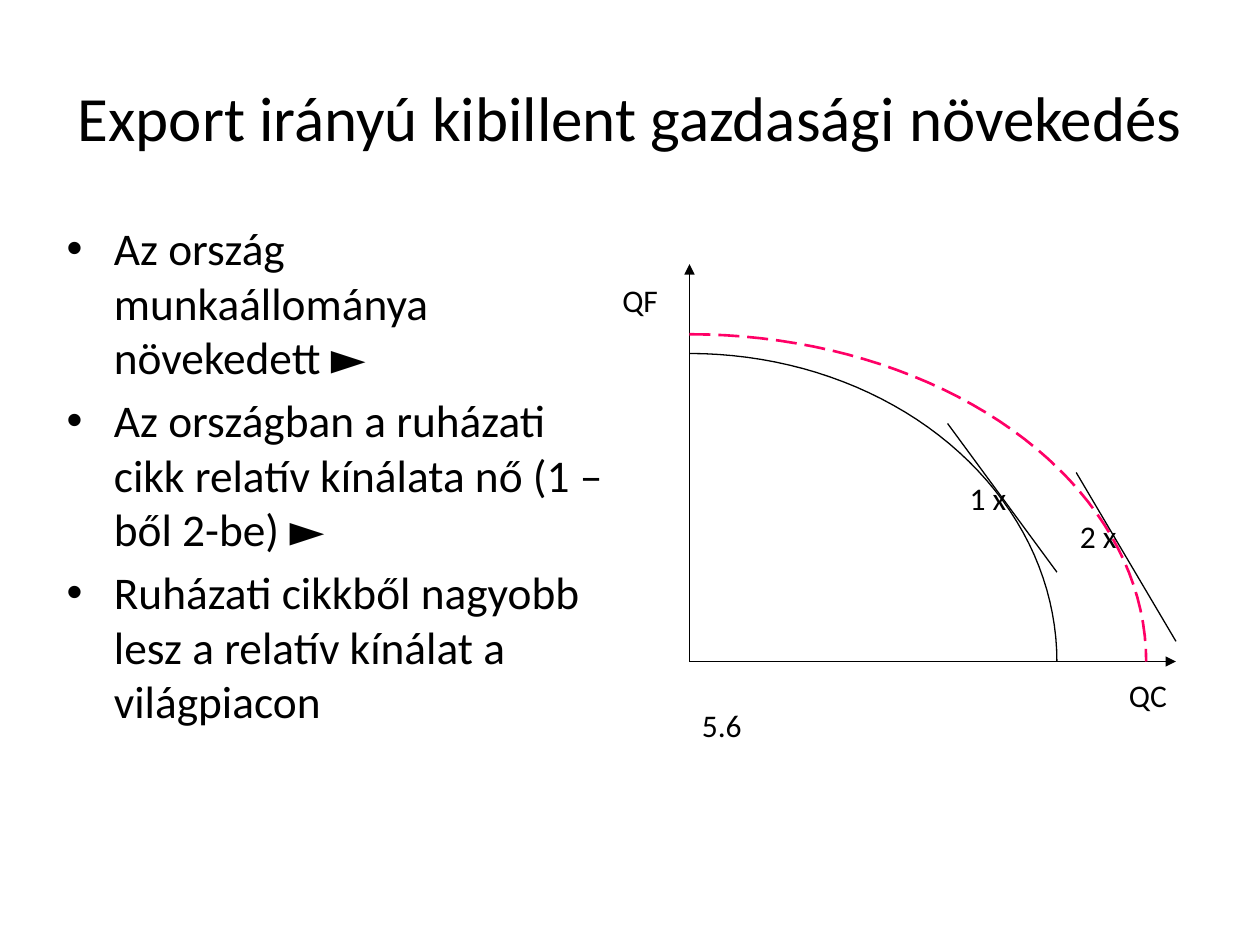
import math
from typing import NamedTuple, Optional

import pptx
import pptx.dml.color
import pptx.enum.dml
import pptx.enum.shapes
import pptx.enum.text
import pptx.oxml.ns
import pptx.util
from lxml import etree

Pt = pptx.util.Pt
RGBColor = pptx.dml.color.RGBColor
Dash = pptx.enum.dml.MSO_LINE
BLACK = RGBColor(0x00, 0x00, 0x00)
PINK = RGBColor(0xFF, 0x00, 0x66)
FONT = "Calibri"
ZERO_X, ZERO_Y = 394, 378  # origin of the graph
STEPS = 40


class Line(NamedTuple):
    x1: float
    y1: float
    x2: float
    y2: float
    arrow: bool = False


class Curve(NamedTuple):
    width: float
    height: float
    color: RGBColor
    weight: float
    dash: Optional[int] = None


class Label(NamedTuple):
    text: str
    x: float
    y: float
    width: float


TITLE = "Export irányú kibillent gazdasági növekedés"
POINTS = [
    "Az ország munkaállománya növekedett ►",
    "Az országban a ruházati cikk relatív kínálata nő (1 –ből 2-be) ►",
    "Ruházati cikkből nagyobb lesz a relatív kínálat a világpiacon",
]
AXES = [
    Line(ZERO_X, ZERO_Y, ZERO_X, 151, True),
    Line(ZERO_X, ZERO_Y, 672, ZERO_Y, True),
]
TANGENTS = [Line(541.5, 242, 604, 327), Line(615, 270, 672, 366.5)]
CURVES = [
    Curve(210, 176, BLACK, 0.75),
    Curve(261, 187, PINK, 1.5, Dash.LONG_DASH),
]
LABELS = [
    Label("QF", 348.5, 157, 51),
    Label("QC", 638, 383, 82),
    Label("5.6", ZERO_X, 400, 91),
    Label("2 x", 610, 292, 51),
    Label("1 x", 547, 270, 57),
]


def tag(parent, name: str, **attrs: str):
    return etree.SubElement(parent, pptx.oxml.ns.qn(name), **attrs)


def style(para, size: float) -> None:
    para.font.name = FONT
    para.font.size = Pt(size)
    para.font.color.rgb = BLACK


def add_box(slide, x: float, y: float, width: float, height: float):
    box = slide.shapes.add_textbox(Pt(x), Pt(y), Pt(width), Pt(height))
    box.text_frame.word_wrap = True
    return box.text_frame


def add_title(slide) -> None:
    title = slide.shapes.title
    title.left, title.top = Pt(36), Pt(21.6)
    title.width, title.height = Pt(648), Pt(90)
    frame = title.text_frame
    frame.text = TITLE
    frame.margin_left = frame.margin_right = Pt(3)
    frame.vertical_anchor = pptx.enum.text.MSO_ANCHOR.MIDDLE
    para = frame.paragraphs[0]
    para.alignment = pptx.enum.text.PP_ALIGN.CENTER
    style(para, 36)


def add_points(slide) -> None:
    frame = add_box(slide, 31, 122.5, 321, 356)
    for i, text in enumerate(POINTS):
        para = frame.paragraphs[0] if i == 0 else frame.add_paragraph()
        para.text = text
        props = para._p.get_or_add_pPr()
        props.set("marL", str(Pt(27)))
        props.set("indent", str(-Pt(27)))
        if i:
            para.space_before = Pt(5)
        tag(props, "a:buFont", typeface="Arial")
        tag(props, "a:buChar", char="•")
        style(para, 25.9)


def add_line(slide, line: Line) -> None:
    kind = pptx.enum.shapes.MSO_CONNECTOR.STRAIGHT
    ends = (Pt(v) for v in line[:4])
    shape = slide.shapes.add_connector(kind, *ends)
    shape.line.color.rgb = BLACK
    shape.line.width = Pt(0.75)
    if line.arrow:
        tag(shape.line._get_or_add_ln(), "a:tailEnd", type="triangle")
    tag(shape._element.spPr, "a:effectLst")


def add_curve(slide, curve: Curve) -> None:
    # Quarter ellipse from the vertical axis to the horizontal one
    turns = [math.pi / 2 * i / STEPS for i in range(STEPS + 1)]
    dots = [
        (Pt(ZERO_X + curve.width * math.sin(t)),
         Pt(ZERO_Y - curve.height * math.cos(t)))
        for t in turns
    ]
    path = slide.shapes.build_freeform(*dots[0])
    path.add_line_segments(dots[1:], close=False)
    shape = path.convert_to_shape()
    shape.shadow.inherit = False
    shape.fill.background()
    shape.line.color.rgb = curve.color
    shape.line.width = Pt(curve.weight)
    if curve.dash is not None:
        shape.line.dash_style = curve.dash


def add_label(slide, label: Label) -> None:
    frame = add_box(slide, label.x, label.y, label.width, 29)
    frame.text = label.text
    style(frame.paragraphs[0], 18)


def main() -> None:
    deck = pptx.Presentation()
    deck.slide_width, deck.slide_height = Pt(720), Pt(540)
    slide = deck.slides.add_slide(deck.slide_layouts[5])

    # Text
    add_title(slide)
    add_points(slide)

    # Graph
    for line in AXES:
        add_line(slide, line)
    for curve in CURVES:
        add_curve(slide, curve)
    for line in TANGENTS:
        add_line(slide, line)
    for label in LABELS:
        add_label(slide, label)

    deck.save("out.pptx")


if __name__ == "__main__":
    main()
